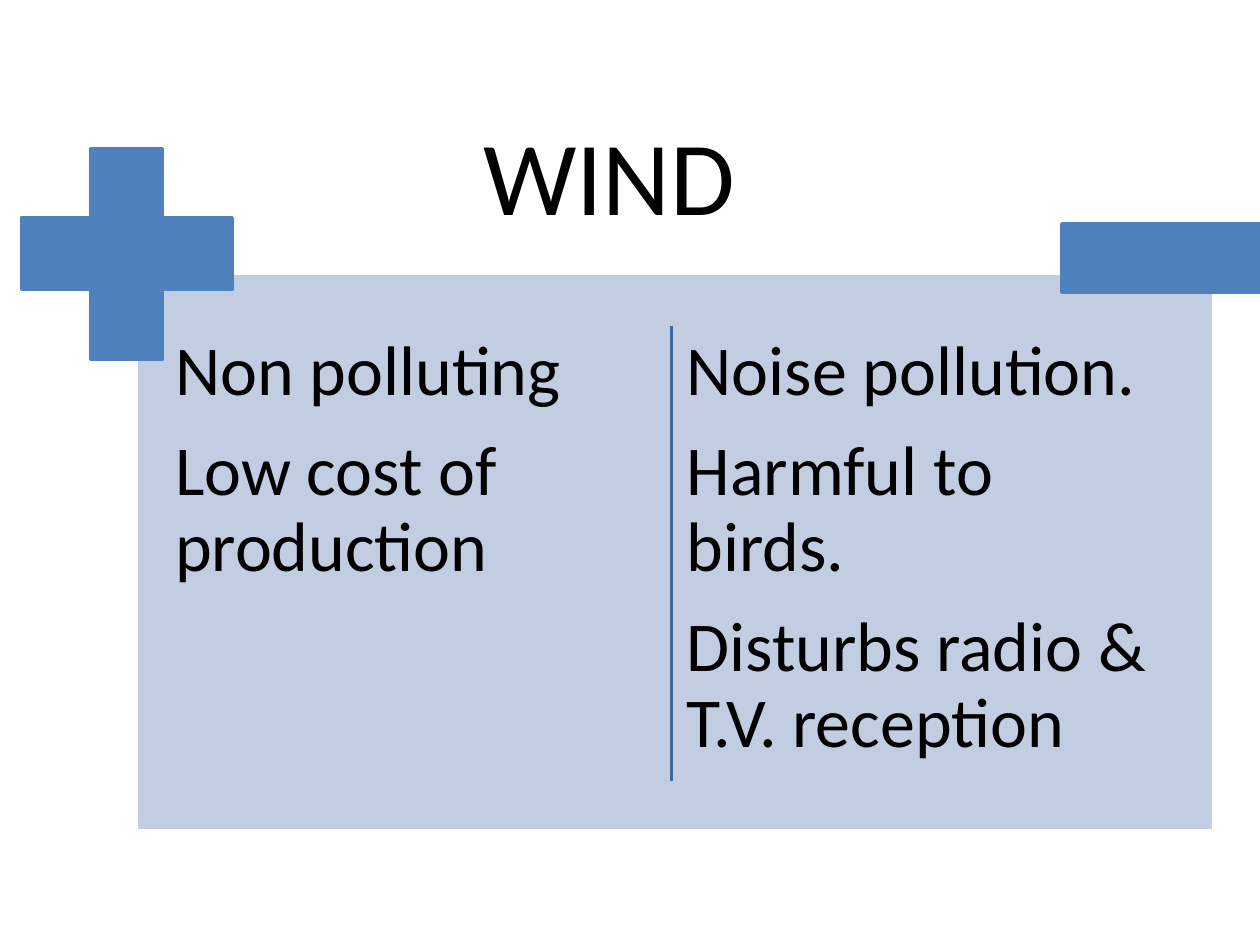
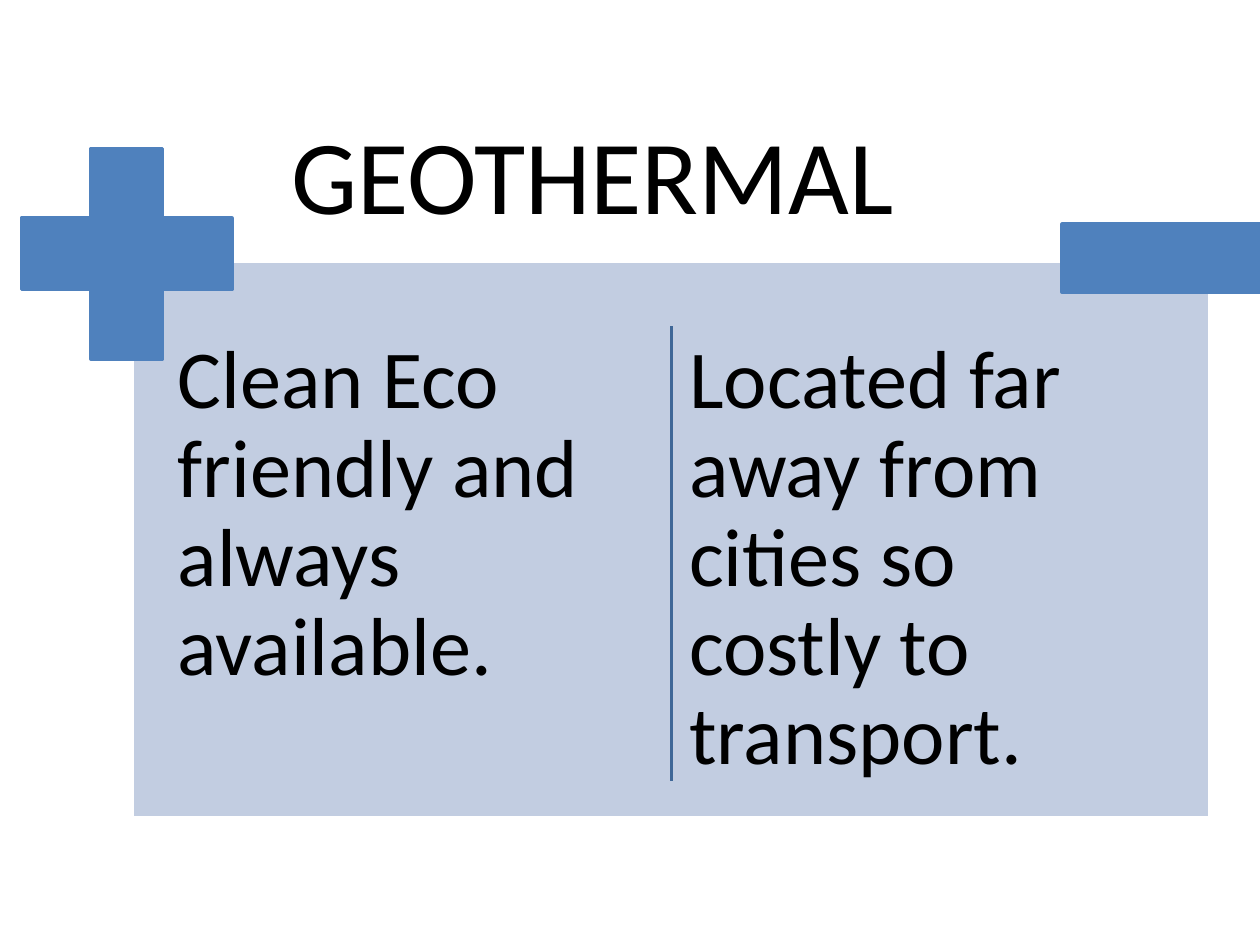
"""Builds two slides weighing the pros and cons of energy sources."""
from lxml import etree
from pptx import Presentation
from pptx import util as u
from pptx.dml.color import RGBColor
from pptx.enum import shapes, text
from pptx.oxml import ns

PX = 9144
FONT = "Calibri"
WHITE = RGBColor(0xFF, 0xFF, 0xFF)
BLACK = RGBColor(0, 0, 0)
PALE = RGBColor(0xC2, 0xCD, 0xE1)
BLUE = RGBColor(0x4F, 0x81, 0xBD)
DEEP = RGBColor(0x3F, 0x67, 0x97)


def px(*lengths):
    return [u.Emu(length * PX) for length in lengths]


class Deck:
    def __init__(self):
        self.prs = Presentation()
        self.prs.slide_width, self.prs.slide_height = px(1000, 750)
        self.slide = None

    def new_slide(self):
        self.slide = self.prs.slides.add_slide(self.prs.slide_layouts[3])

    def place(self, holder, box, inset_x, inset_y):
        holder.left, holder.top, holder.width, holder.height = px(*box)
        frame = holder.text_frame
        frame.word_wrap = True
        frame.auto_size = text.MSO_AUTO_SIZE.NONE
        frame.vertical_anchor = text.MSO_ANCHOR.TOP
        frame.margin_left, frame.margin_right = px(inset_x, inset_x)
        frame.margin_top, frame.margin_bottom = px(inset_y, inset_y)
        return frame

    def run(self, paragraph, words, size):
        run = paragraph.add_run()
        run.text = words
        run.font.name = FONT
        run.font.size = u.Pt(size)
        run.font.color.rgb = BLACK

    def title(self, words, box):
        heading = self.place(self.slide.shapes.title, box, 10, 5).paragraphs[0]
        heading.alignment = text.PP_ALIGN.CENTER
        self.run(heading, words, 60)

    def points(self, index, lines, left, size, inset):
        box = (left, 258, 397, 378)
        frame = self.place(self.slide.placeholders[index], box, inset, inset)
        for number, line in enumerate(lines):
            point = frame.add_paragraph() if number else frame.paragraphs[0]
            point.line_spacing = 0.9
            point.space_before = u.Pt(0)
            point.space_after = u.Pt(0.35 * size)
            self.run(point, line, size)
            props = point._p.get_or_add_pPr()
            props.set("marL", "0")
            props.set("indent", "0")
            etree.SubElement(props, ns.qn("a:buNone"))

    def shape(self, kind, box, fill, line):
        shape = self.slide.shapes.add_shape(kind, *px(*box))
        shape.shadow.inherit = False
        shape.fill.solid()
        shape.fill.fore_color.rgb = fill
        shape.line.color.rgb = line
        shape.line.width = u.Pt(2)
        return shape

    def panel(self, left, top):
        panel = self.shape(shapes.MSO_SHAPE.RECTANGLE, (left, top, 855, 442), PALE, WHITE)
        panel.element.getparent().insert(2, panel.element)

    def signs(self):
        plus = self.shape(shapes.MSO_SHAPE.CROSS, (17, 118, 167, 167), BLUE, BLUE)
        plus.adjustments[0] = 0.33
        self.shape(shapes.MSO_SHAPE.RECTANGLE, (843, 178, 157, 54), BLUE, BLUE)

    def divider(self):
        divider = self.slide.shapes.add_connector(
            shapes.MSO_CONNECTOR.STRAIGHT, *px(533, 259, 533, 620))
        divider.line.color.rgb = DEEP
        divider.line.width = u.Pt(2)
        etree.SubElement(divider.element.spPr, ns.qn("a:effectLst"))

    def comparison(self, source, title_box, panel_at, pros, cons, size, inset):
        self.new_slide()
        self.panel(*panel_at)
        self.title(source, title_box)
        self.points(1, pros, 131, size, inset)
        self.points(2, cons, 537, size, inset)
        self.signs()
        self.divider()


def main():
    deck = Deck()
    deck.comparison(
        "WIND", (175, 83, 617, 111), (108, 217),
        ["Non polluting", "Low cost of production"],
        ["Noise pollution.", "Harmful to birds.", "Disturbs radio & T.V. reception"],
        size=40, inset=8)
    deck.comparison(
        "GEOTHERMAL", (133, 82, 675, 111), (105, 207),
        ["Clean Eco friendly and always available."],
        ["Located far away from cities so costly to transport."],
        size=47, inset=10)
    deck.prs.save("out.pptx")


if __name__ == "__main__":
    main()
